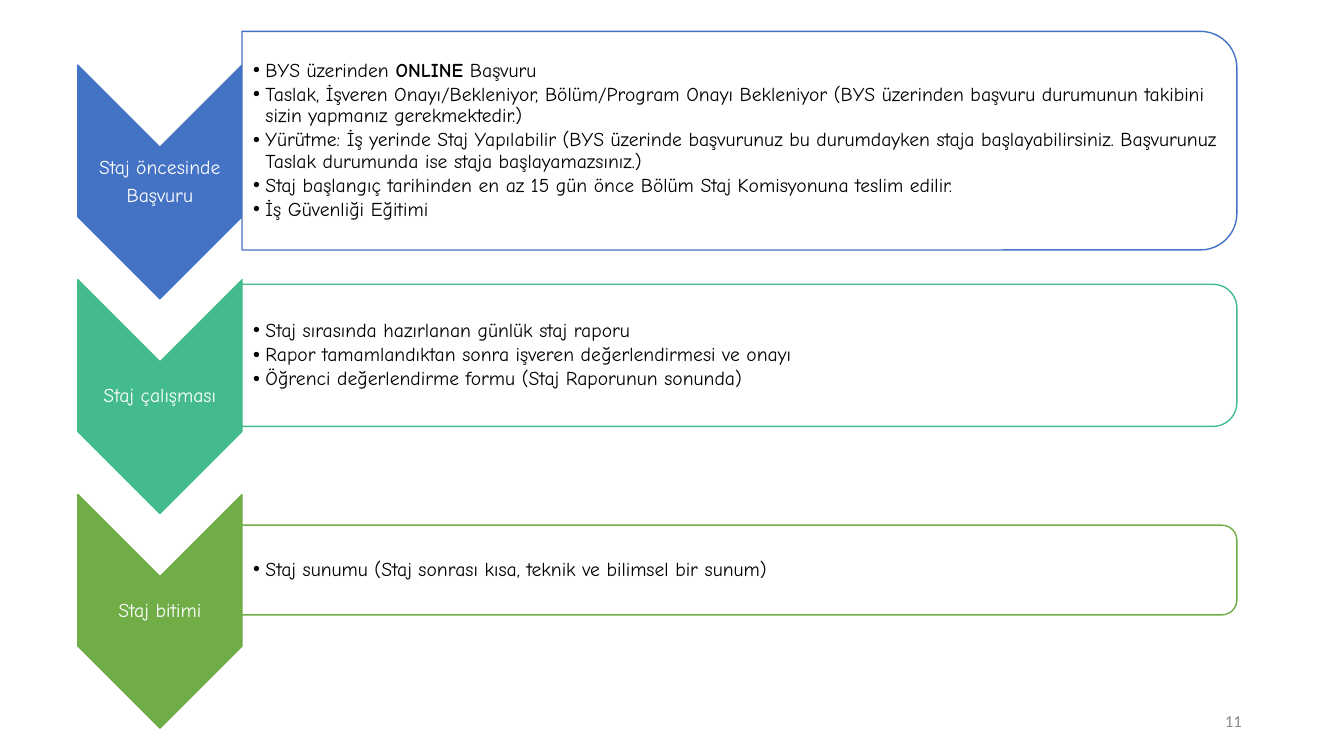
from lxml import etree
from pptx import Presentation
from pptx.dml.color import RGBColor
from pptx.enum.shapes import MSO_SHAPE
from pptx.enum.text import MSO_ANCHOR, MSO_AUTO_SIZE, PP_ALIGN
from pptx.oxml.ns import qn
from pptx.util import Cm, Pt

CHEVRON, PANEL = MSO_SHAPE.CHEVRON, MSO_SHAPE.ROUND_2_SAME_RECTANGLE
MIDDLE, FIXED = MSO_ANCHOR.MIDDLE, MSO_AUTO_SIZE.NONE
LEFT, CENTER, RIGHT = PP_ALIGN.LEFT, PP_ALIGN.CENTER, PP_ALIGN.RIGHT

COLORS = {"blue": "4472C4", "teal": "43BB8D", "green": "70AD47",
          "white": "FFFFFF", "black": "000000", "gray": "8C8C8C"}

STAGES = [
    ("blue", 5.51, ["Staj öncesinde", "Başvuru"], [
        "BYS üzerinden **ONLINE** Başvuru",
        "Taslak, İşveren Onayı/Bekleniyor, Bölüm/Program Onayı Bekleniyor "
        "(BYS üzerinden başvuru durumunun takibini sizin yapmanız gerekmektedir.)",
        "Yürütme: İş yerinde Staj Yapılabilir (BYS üzerinde başvurunuz bu "
        "durumdayken staja başlayabilirsiniz. Başvurunuz Taslak durumunda ise "
        "staja başlayamazsınız.)",
        "Staj başlangıç tarihinden en az 15 gün önce Bölüm Staj Komisyonuna "
        "teslim edilir.",
        "İş Güvenliği Eğitimi"]),
    ("teal", 3.58, ["Staj çalışması"], [
        "Staj sırasında hazırlanan günlük staj raporu",
        "Rapor tamamlandıktan sonra işveren değerlendirmesi ve onayı",
        "Öğrenci değerlendirme formu (Staj Raporunun sonunda)"]),
    ("green", 2.26, ["Staj bitimi"], [
        "Staj sunumu (Staj sonrası kısa, teknik ve bilimsel bir sunum)"]),
]


def rgb(name):
    """Return the named colour."""
    return RGBColor.from_string(COLORS[name])


def bullet(para):
    """Give a paragraph a round bullet and a hanging indent."""
    props = para._p.get_or_add_pPr()
    props.set("marL", str(Cm(0.31)))
    props.set("indent", str(Cm(-0.31)))
    etree.SubElement(props, qn("a:buFont"), typeface="Arial")
    etree.SubElement(props, qn("a:buChar"), char="•")


def write(frame, lines, size=14, font="Comic Neue", color="black", align=LEFT,
          after=0, spacing=0.9, inset=0.03, edge=0.03, bullets=False):
    """Fill a text frame with formatted lines; ** marks bold parts."""
    frame.word_wrap = True
    frame.auto_size = FIXED
    frame.vertical_anchor = MIDDLE
    frame.margin_left = Cm(inset)
    frame.margin_right = Cm(edge)
    frame.margin_top = frame.margin_bottom = Cm(0.03)
    for i, line in enumerate(lines):
        para = frame.paragraphs[0] if i == 0 else frame.add_paragraph()
        para.alignment = align
        para.line_spacing = spacing
        para.space_before, para.space_after = Pt(0), Pt(after)
        if bullets:
            bullet(para)
        for j, part in enumerate(line.split("**")):
            run = para.add_run()
            run.text = part
            run.font.size, run.font.name = Pt(size), font
            run.font.bold = j % 2 == 1
            run.font.color.rgb = rgb(color)


def turned(slide, kind, box, fill, line):
    """Add a shape turned by 90 degrees that covers the given box."""
    x, y, w, h = box
    shape = slide.shapes.add_shape(kind, Cm(x + (w - h) / 2), Cm(y + (h - w) / 2),
                                   Cm(h), Cm(w))
    shape.rotation = 90
    shape.shadow.inherit = False
    shape.fill.solid()
    shape.fill.fore_color.rgb = rgb(fill)
    shape.line.color.rgb = rgb(line)
    shape.line.width = Pt(1)
    return shape


def label(slide, box, color, lines):
    """Draw the downward chevron with its caption."""
    x, y, w, h = box
    turned(slide, CHEVRON, box, color, color)
    area = slide.shapes.add_textbox(Cm(x), Cm(y + h / 2 - 0.89), Cm(w), Cm(1.78))
    write(area.text_frame, lines, color="white", align=CENTER, after=4.9)


def panel(slide, box, color, lines, body):
    """Draw the rounded panel and lay its list over it."""
    x, y, w, h = box
    shape = turned(slide, PANEL, box, "white", color)
    tint = shape.fill._xPr.find(".//" + qn("a:srgbClr"))
    etree.SubElement(tint, qn("a:alpha"), val="90000")
    trim = h / 6 * 0.29
    body.left, body.top = Cm(x), Cm(y + trim)
    body.width, body.height = Cm(w - trim), Cm(h - 2 * trim)
    slide.shapes._spTree.append(body._element)
    write(body.text_frame, lines, after=2.1, inset=0.28, bullets=True)


def stage(slide, box, entry, body):
    """Draw one stage: chevron at the left, panel at the right."""
    x, y, w, h = box
    color, tall, title, lines = entry
    label(slide, (x, y, 4.14, h), color, title)
    top = y + h / 2 - 1.04 - tall / 2
    panel(slide, (x + 4.14, top, w - 4.14, tall), color, lines, body)


def number(slide, box, text):
    """Write the page number."""
    area = slide.shapes.add_textbox(*map(Cm, box))
    write(area.text_frame, [text], size=12, font="Calibri", color="gray",
          align=RIGHT, spacing=1.0, inset=0.25, edge=0.25)


def main():
    """Build the slide and save it."""
    deck = Presentation()
    deck.slide_width, deck.slide_height = Cm(33.87), Cm(19.05)
    slide = deck.slides.add_slide(deck.slide_layouts[4])
    title, *bodies = slide.placeholders
    for spare in (title, bodies.pop()):
        spare._element.getparent().remove(spare._element)
    for i, (entry, body) in enumerate(zip(STAGES, bodies)):
        stage(slide, (1.96, 1.64 + i * 5.41, 29.21, 5.89), entry, body)
    number(slide, (23.93, 17.65, 7.62, 1.02), "11")
    deck.save("out.pptx")


if __name__ == "__main__":
    main()
